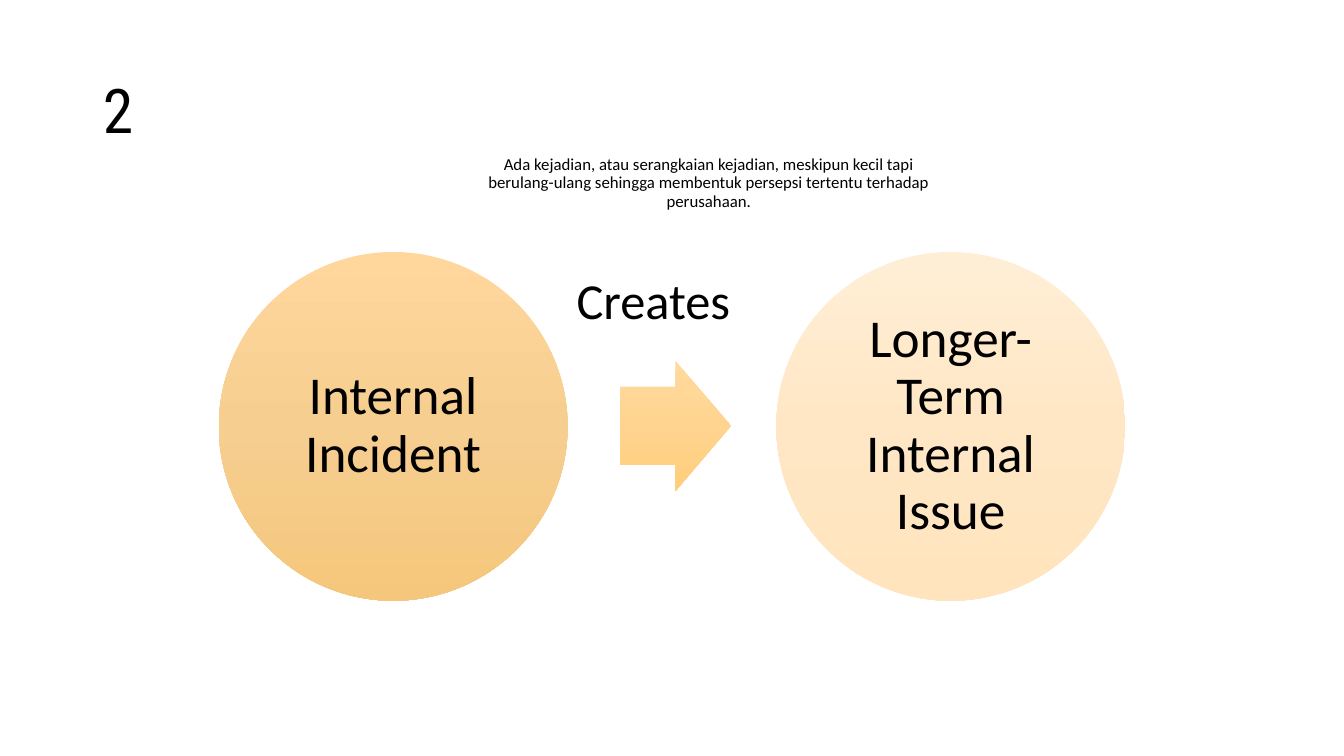
from copy import deepcopy
from dataclasses import dataclass

from pptx import Presentation
from pptx.dml.color import RGBColor
from pptx.enum import shapes, text
from pptx.util import Inches, Pt


@dataclass(frozen=True)
class Theme:
    """Fonts, type sizes and colours of the slide."""
    title_font: str = "Roboto Condensed"
    body_font: str = "Calibri"
    title_size: int = 44
    circle_size: int = 38
    label_size: int = 36
    note_size: int = 12
    ink: str = "000000"
    incident: tuple = ("FFD79D", "F6CE90", "F5C77C")
    arrow: tuple = ("FFD99E", "FFD490", "FFCE7C")
    issue: tuple = ("FFEED6", "FFE7C5", "FFE4BE")


THEME = Theme()


def write(s, words, size, font=THEME.body_font, align=text.PP_ALIGN.CENTER,
          anchor=text.MSO_ANCHOR.MIDDLE, inset=None, spacing=0.9):
    """Set and format the text of a shape."""
    tf = s.text_frame
    tf.text = words
    tf.word_wrap = True
    tf.auto_size = text.MSO_AUTO_SIZE.NONE
    tf.vertical_anchor = anchor
    if inset is not None:
        tf.margin_left = tf.margin_right = Inches(inset)
        tf.margin_top = tf.margin_bottom = Inches(inset)
    p = tf.paragraphs[0]
    p.alignment = align
    p.line_spacing = spacing
    r = p.runs[0]
    r.font.name = font
    r.font.size = Pt(size)
    r.font.color.rgb = RGBColor.from_string(THEME.ink)


def add_title(slide, words):
    """Place the slide title."""
    s = slide.shapes.title
    s.left, s.top = Inches(0.92), Inches(0.4)
    s.width, s.height = Inches(11.5), Inches(1.45)
    write(s, words, THEME.title_size, THEME.title_font, text.PP_ALIGN.LEFT)


def add_gradient_shape(slide, kind, box, colors):
    """Add a borderless shape shaded from top to bottom."""
    s = slide.shapes.add_shape(kind, *map(Inches, box))
    s.shadow.inherit = False
    s.line.fill.background()
    s.fill.gradient()
    s.fill.gradient_angle = 270
    stops = s.fill._fill._gradFill.gsLst
    stops.insert(1, deepcopy(stops[0]))
    for i, (stop, color) in enumerate(zip(s.fill.gradient_stops, colors)):
        stop.position = i / (len(colors) - 1)
        stop.color.rgb = RGBColor.from_string(color)
    return s


def add_circle(slide, left, words, colors):
    """Add a captioned circle."""
    s = add_gradient_shape(slide, shapes.MSO_SHAPE.OVAL,
                           (left, 2.5, 3.46, 3.46), colors)
    write(s, words, THEME.circle_size, inset=0.05)


def add_arrow(slide):
    """Add the arrow between the circles."""
    s = add_gradient_shape(slide, shapes.MSO_SHAPE.RIGHT_ARROW,
                           (6.15, 3.58, 1.1, 1.29), THEME.arrow)
    s.adjustments[0] = 0.6
    s.adjustments[1] = 0.5


def add_text(slide, box, words, size, **style):
    """Add a text box anchored at its top."""
    s = slide.shapes.add_textbox(*map(Inches, box))
    write(s, words, size, anchor=text.MSO_ANCHOR.TOP, **style)


def main():
    """Build and save the slide."""
    prs = Presentation()
    prs.slide_width, prs.slide_height = Inches(13.33), Inches(7.5)
    slide = prs.slides.add_slide(prs.slide_layouts[5])
    add_title(slide, "2")
    add_circle(slide, 2.17, "Internal Incident", THEME.incident)
    add_arrow(slide)
    add_circle(slide, 7.7, "Longer-Term Internal Issue", THEME.issue)
    add_text(slide, (5.62, 2.62, 2.35, 0.71), "Creates", THEME.label_size,
             align=text.PP_ALIGN.LEFT, spacing=1.0)
    add_text(slide, (4.67, 1.55, 4.72, 0.79),
             "Ada kejadian, atau serangkaian kejadian, meskipun kecil tapi "
             "berulang-ulang sehingga membentuk persepsi tertentu terhadap "
             "perusahaan.", THEME.note_size, inset=0)
    prs.save("out.pptx")


if __name__ == "__main__":
    main()
